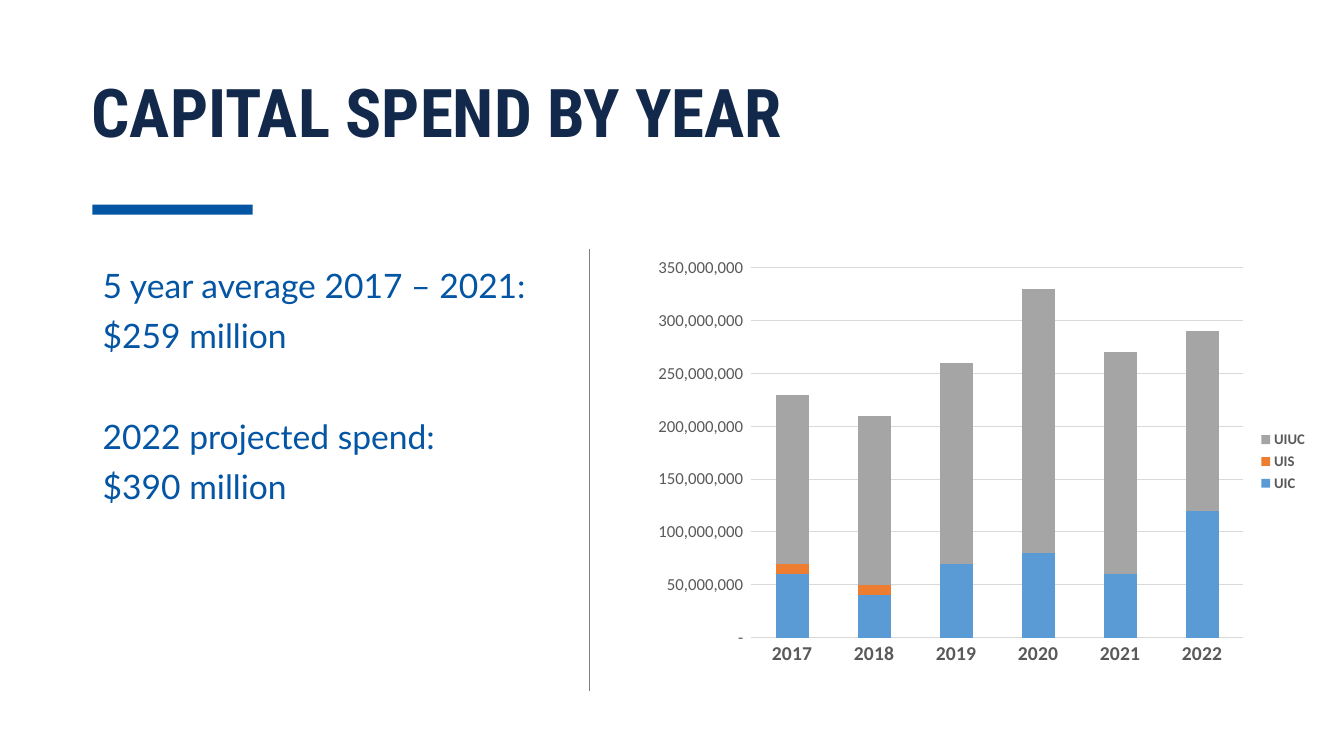
import pptx
import pptx.chart.data
import pptx.dml.color
import pptx.enum.chart
import pptx.enum.shapes
import pptx.enum.text
import pptx.oxml
import pptx.oxml.ns
import pptx.util
from pptx.util import Cm

COLORS = {
    "navy": "13294B", "blue": "0455A4", "divider": "7F7F7F",
    "label": "595959", "grid": "D9D9D9",
    "UIC": "5B9BD5", "UIS": "ED7D31", "UIUC": "A5A5A5",
}
YEARS = ["2017", "2018", "2019", "2020", "2021", "2022"]
SPEND_MILLIONS = {
    "UIC": [60, 40, 70, 80, 60, 120],
    "UIS": [10, 10, 0, 0, 0, 0],
    "UIUC": [160, 160, 190, 250, 210, 170],
}
# Each line of text with its space before, in points
SPEND_LINES = [
    ("5 year average 2017 – 2021:", 0),
    ("$259 million", 10),
    ("2022 projected spend:", 46),
    ("$390 million", 10),
]
NUMBER_FORMAT = r'_(* #,##0_);_(* \(#,##0\);_(* "-"_);_(@_)'


def rgb(name):
    return pptx.dml.color.RGBColor.from_string(COLORS[name])


def style_font(font, name, size, color, bold=False):
    font.name = name
    font.size = pptx.util.Pt(size)
    font.bold = bold
    font.color.rgb = rgb(color)


def add_text(slide, box, lines, font_name, size, color, bold=False):
    frame = slide.shapes.add_textbox(*map(Cm, box)).text_frame
    frame.word_wrap = True
    frame.vertical_anchor = pptx.enum.text.MSO_ANCHOR.TOP
    for index, (text, space_before) in enumerate(lines):
        paragraph = frame.add_paragraph() if index else frame.paragraphs[0]
        paragraph.line_spacing = 0.9
        paragraph.space_before = pptx.util.Pt(space_before)
        run = paragraph.add_run()
        run.text = text
        style_font(run.font, font_name, size, color, bold)


def add_header(slide, left, top, width, height):
    # Title with its accent bar below
    add_text(slide, (left, top, width, height), [("CAPITAL SPEND BY YEAR", 0)],
             "Roboto Condensed", 48, "navy", True)
    bar = slide.shapes.add_shape(
        pptx.enum.shapes.MSO_SHAPE.RECTANGLE,
        Cm(left + 0.27), Cm(top + height + 0.84), Cm(4.04), Cm(0.25))
    bar.shadow.inherit = False
    bar.fill.solid()
    bar.fill.fore_color.rgb = rgb("blue")
    bar.line.fill.background()


def add_divider(slide, left, top, height):
    divider = slide.shapes.add_connector(
        pptx.enum.shapes.MSO_CONNECTOR.STRAIGHT,
        Cm(left), Cm(top), Cm(left), Cm(top + height))
    divider.line.color.rgb = rgb("divider")
    divider.line.width = pptx.util.Pt(1)
    properties = divider._element.spPr
    properties.append(pptx.oxml.parse_xml(
        f'<a:effectLst {pptx.oxml.ns.nsdecls("a")}/>'))


def set_plot_layout(chart, x, y, width, height):
    # Inner plot area as fractions of the chart box
    plot_area = chart._chartSpace.chart.plotArea
    for layout in plot_area.findall(pptx.oxml.ns.qn("c:layout")):
        plot_area.remove(layout)
    plot_area.insert(0, pptx.oxml.parse_xml(
        f'<c:layout {pptx.oxml.ns.nsdecls("c")}><c:manualLayout>'
        '<c:layoutTarget val="inner"/><c:xMode val="edge"/><c:yMode val="edge"/>'
        f'<c:x val="{x}"/><c:y val="{y}"/><c:w val="{width}"/><c:h val="{height}"/>'
        '</c:manualLayout></c:layout>'))


def add_spend_chart(slide, left, top, width, height):
    data = pptx.chart.data.CategoryChartData(number_format=NUMBER_FORMAT)
    data.categories = YEARS
    for campus, millions in SPEND_MILLIONS.items():
        data.add_series(campus, [value * 1_000_000 for value in millions])
    chart = slide.shapes.add_chart(
        pptx.enum.chart.XL_CHART_TYPE.COLUMN_STACKED,
        Cm(left), Cm(top), Cm(width), Cm(height), data).chart
    chart.has_title = False
    style_font(chart.font, "Calibri", 10, "label")
    set_plot_layout(chart, 2.78 / width, 0.48 / height,
                    12.4 / width, 9.32 / height)

    # Stacked columns
    plot = chart.plots[0]
    plot.gap_width = 150
    plot.overlap = 100
    plot.vary_by_categories = False
    for series in plot.series:
        series.format.fill.solid()
        series.format.fill.fore_color.rgb = rgb(series.name)

    # Axes and grid
    for axis, size, bold in ((chart.category_axis, 14, True),
                             (chart.value_axis, 12, False)):
        axis.major_tick_mark = pptx.enum.chart.XL_TICK_MARK.NONE
        axis.minor_tick_mark = pptx.enum.chart.XL_TICK_MARK.NONE
        style_font(axis.tick_labels.font, "Calibri", size, "label", bold)
    value_axis = chart.value_axis
    value_axis.minimum_scale = 0
    value_axis.maximum_scale = 350_000_000
    value_axis.major_unit = 50_000_000
    value_axis.tick_labels.number_format = NUMBER_FORMAT
    value_axis.tick_labels.number_format_is_linked = False
    value_axis.format.line.fill.background()
    for line in (chart.category_axis.format.line,
                 value_axis.major_gridlines.format.line):
        line.color.rgb = rgb("grid")
        line.width = pptx.util.Pt(0.75)

    # Legend
    chart.has_legend = True
    chart.legend.position = pptx.enum.chart.XL_LEGEND_POSITION.RIGHT
    chart.legend.include_in_layout = False
    style_font(chart.legend.font, "Calibri", 10.5, "label", True)


def main():
    presentation = pptx.Presentation()
    presentation.slide_width = Cm(33.87)
    presentation.slide_height = Cm(19.05)
    slide = presentation.slides.add_slide(presentation.slide_layouts[6])
    add_header(slide, 2.06, 1.88, 29.21, 2.44)
    add_text(slide, (2.34, 6.67, 29.21, 10.49), SPEND_LINES,
             "Lato", 24, "blue")
    add_spend_chart(slide, 16.15, 6.27, 17.07, 10.72)
    add_divider(slide, 14.86, 6.27, 11.14)
    presentation.save("out.pptx")


if __name__ == "__main__":
    main()
